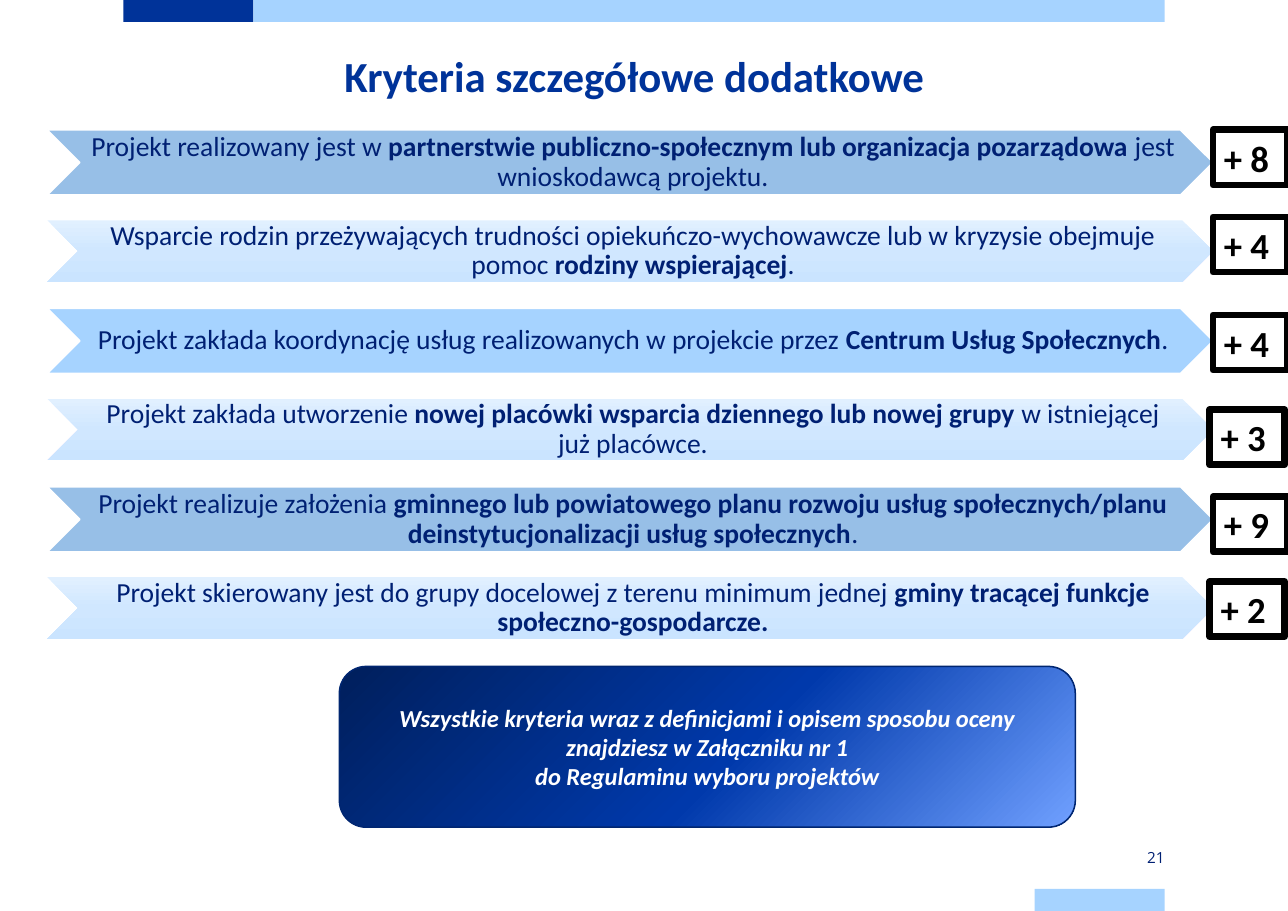
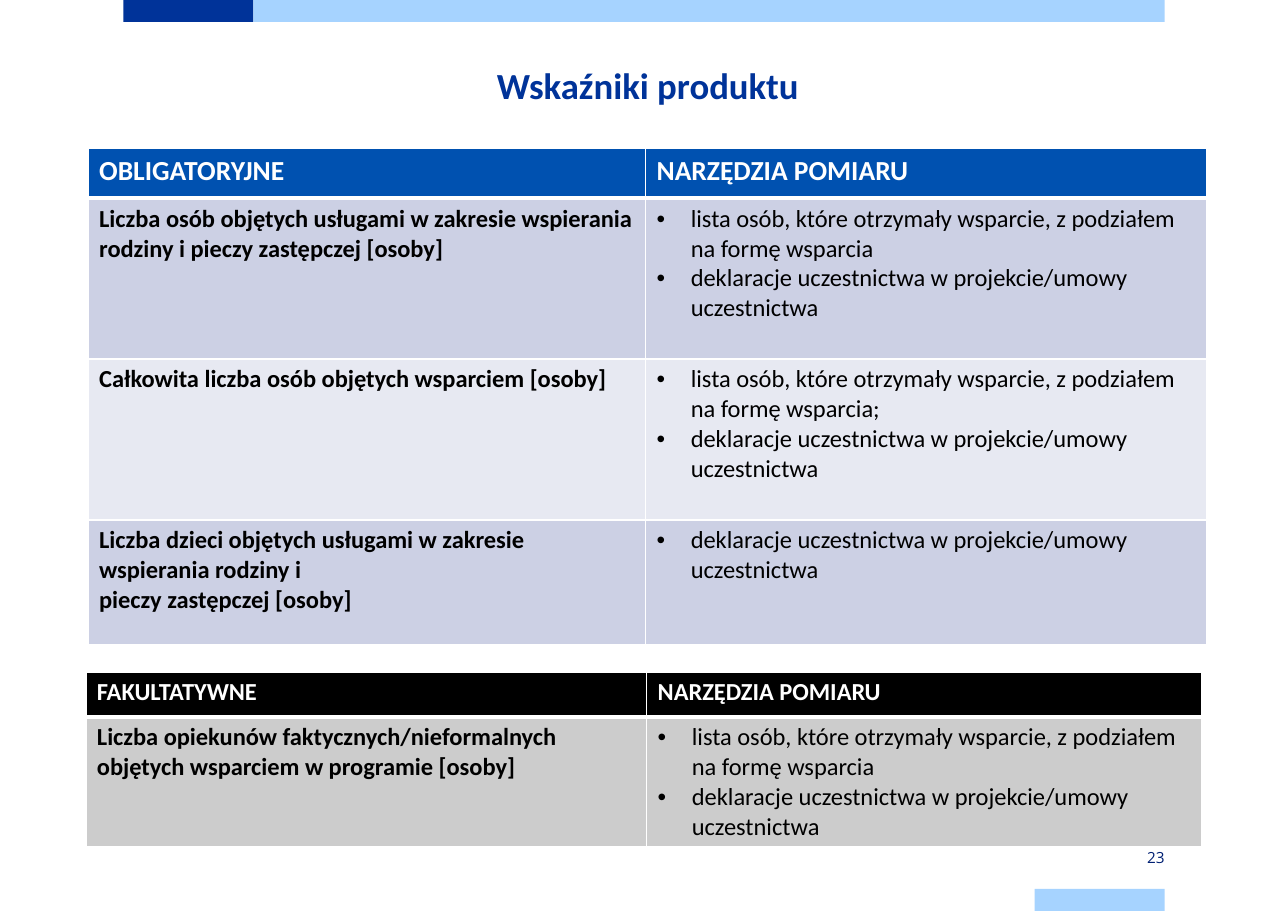
from pptx import Presentation
from pptx import util as u
from pptx.dml.color import RGBColor
from pptx.enum import shapes, text
from pptx.oxml import parse_xml
from pptx.oxml.ns import nsdecls, qn

COLORS = {
    "navy": "003399", "sky": "A6D3FF", "ink": "002073", "steel": "97BFE7",
    "white": "FFFFFF", "black": "000000", "outline": "002671",
    "header": "0051B0", "band": "CCD0E4", "band_light": "E7E9F2", "grey": "CCCCCC",
}
PALE_STOPS = [(0, "E1F0FF"), (50, "D0E7FF"), (100, "CAE4FF")]
DEEP_STOPS = [(0, "70A0FF"), (46, "0039AB"), (100, "001F5C")]
DOWNWARD = '<a:lin ang="5400000" scaled="0"/>'
FROM_CORNER = '<a:path path="circle"><a:fillToRect l="100000" t="100000"/></a:path>'
PP, MSO = text.PP_ALIGN, text.MSO_ANCHOR
SHAPE = shapes.MSO_SHAPE

CRITERIA = [  # text with *bold* parts, points, left of badge, top of badge
    ("Projekt realizowany jest w *partnerstwie publiczno-społecznym lub organizacja "
     "pozarządowa *jest wnioskodawcą projektu.", "+ 8", 11.01, 1.18),
    ("Wsparcie rodzin przeżywających trudności opiekuńczo-wychowawcze lub w kryzysie "
     "obejmuje pomoc *rodziny wspierającej*.", "+ 4", 11.01, 1.97),
    ("Projekt zakłada koordynację usług realizowanych w projekcie przez "
     "*Centrum Usług Społecznych*.", "+ 4", 11.01, 2.86),
    ("Projekt zakłada utworzenie *nowej placówki wsparcia dziennego lub nowej grupy* "
     "w istniejącej\njuż placówce.", "+ 3", 10.98, 3.72),
    ("Projekt realizuje założenia *gminnego lub powiatowego planu rozwoju usług "
     "społecznych/planu deinstytucjonalizacji usług społecznych*.", "+ 9", 11.01, 4.51),
    ("Projekt skierowany jest do grupy docelowej z terenu minimum jednej "
     "*gminy tracącej funkcje społeczno-gospodarcze.", "+ 2", 10.98, 5.28),
]
ROW_FILLS = ["steel", None, "sky", None, "steel", None]  # None: pale gradient

ATTENDANCE = "lista osób, które otrzymały wsparcie, z podziałem na formę wsparcia"
DECLARATIONS = "deklaracje uczestnictwa w projekcie/umowy uczestnictwa"
TOOLS = "NARZĘDZIA POMIARU"
MANDATORY = [  # indicator paragraphs, measuring tools
    (["Liczba osób objętych usługami w zakresie wspierania rodziny i pieczy "
      "zastępczej [osoby]"], [ATTENDANCE, DECLARATIONS]),
    (["Całkowita liczba osób objętych wsparciem [osoby]"],
     [ATTENDANCE + ";", DECLARATIONS]),
    (["Liczba dzieci objętych usługami w zakresie wspierania rodziny i",
      "pieczy zastępczej [osoby]"], [DECLARATIONS]),
]
OPTIONAL = [
    (["Liczba opiekunów faktycznych/nieformalnych objętych wsparciem w programie [osoby]"],
     [ATTENDANCE, DECLARATIONS]),
]


def rgb(name):
    return RGBColor.from_string(COLORS[name])


def inches(box):
    return [u.Inches(length) for length in box]


def style(paragraph, size, color, bold=None, align=None, font="Calibri"):
    paragraph.alignment = align
    paragraph.font.name = font
    paragraph.font.size = u.Pt(size)
    paragraph.font.color.rgb = rgb(color)
    paragraph.font.bold = bold


def add_block(slide, kind, box, fill=None, line=None, width=1.0):
    block = slide.shapes.add_shape(kind, *inches(box))
    block.shadow.inherit = False
    if fill:
        block.fill.solid()
        block.fill.fore_color.rgb = rgb(fill)
    else:
        block.fill.background()
    if line:
        block.line.color.rgb = rgb(line)
        block.line.width = u.Pt(width)
    else:
        block.line.fill.background()
    return block


def set_gradient(block, stops, direction):
    block.fill.gradient()
    properties = block.element.spPr
    marks = "".join(f'<a:gs pos="{pos * 1000}"><a:srgbClr val="{color}"/></a:gs>'
                    for pos, color in stops)
    gradient = parse_xml(f'<a:gradFill {nsdecls("a")} rotWithShape="1">'
                         f'<a:gsLst>{marks}</a:gsLst>{direction}</a:gradFill>')
    properties.replace(properties.find(qn("a:gradFill")), gradient)


def add_text(slide, box, insets=(0, 0, 0, 0), anchor=MSO.TOP):
    frame = slide.shapes.add_textbox(*inches(box)).text_frame
    frame.word_wrap = True
    frame.vertical_anchor = anchor
    (frame.margin_left, frame.margin_top,
     frame.margin_right, frame.margin_bottom) = inches(insets)
    return frame.paragraphs[0]


def add_frame(slide, number, title, title_box, title_size):
    """Bands, title and page number shared by all slides."""
    for box, color in [((1.12, 0, 1.18, 0.2), "navy"), ((2.3, 0, 8.27, 0.2), "sky"),
                       ((9.39, 8.07, 1.18, 0.2), "sky")]:
        add_block(slide, SHAPE.RECTANGLE, box, color)
    heading = add_text(slide, title_box)
    heading.text = title
    heading.line_spacing = u.Pt(36)
    style(heading, title_size, "navy", True, PP.CENTER)
    page = add_text(slide, (9.39, 7.68, 1.18, 0.2), (0, 0.08, 0, 0.08), MSO.MIDDLE)
    page.text = number
    style(page, 10, "ink", align=PP.RIGHT, font="Open Sans")


def add_criterion(slide, box, wording, fill):
    """Chevron with its wording between notch and tip."""
    left, top, width, height = box
    chevron = add_block(slide, SHAPE.CHEVRON, box, fill, "white" if fill else None)
    if not fill:
        set_gradient(chevron, PALE_STOPS, DOWNWARD)
    label = add_text(slide, (left + height / 2, top, width - height, height),
                     (0.08, 0.03, 0.03, 0.03), MSO.MIDDLE)
    style(label, 18, "ink", align=PP.CENTER)
    label.line_spacing = 0.9
    for part, words in enumerate(wording.split("*")):
        for index, line in enumerate(words.split("\n")):
            if index:
                label.add_line_break()
            if line:
                run = label.add_run()
                run.text = line
                if part % 2:
                    run.font.bold = True


def add_badge(slide, box, points):
    badge = add_block(slide, SHAPE.RECTANGLE, box, None, "black", 4.5)
    badge.text_frame.vertical_anchor = MSO.TOP
    score = badge.text_frame.paragraphs[0]
    score.text = points
    style(score, 24, "black", True, PP.LEFT)


def add_note(slide, box, lines):
    note = add_block(slide, SHAPE.ROUNDED_RECTANGLE, box, "navy", "outline")
    set_gradient(note, DEEP_STOPS, FROM_CORNER)
    frame = note.text_frame
    frame.word_wrap = True
    frame.vertical_anchor = MSO.MIDDLE
    frame.text = "\n".join(lines)
    for paragraph in frame.paragraphs:
        style(paragraph, 16, "white", True, PP.CENTER)
        paragraph.font.italic = True


def fill_cell(cell, lines, size, color, fill, bold, bullets=False, top=1, bottom=1):
    properties = cell._tc.get_or_add_tcPr()
    for side, width in zip("LRTB", (1, 1, top, bottom)):
        properties.append(parse_xml(
            f'<a:ln{side} {nsdecls("a")} w="{width * 12700}"><a:solidFill>'
            f'<a:srgbClr val="{COLORS["white"]}"/></a:solidFill></a:ln{side}>'))
    cell.fill.solid()
    cell.fill.fore_color.rgb = rgb(fill)
    cell.text_frame.text = "\n".join(lines)
    for paragraph in cell.text_frame.paragraphs:
        if bullets:
            layout = paragraph._p.get_or_add_pPr()
            layout.set("marL", str(u.Inches(0.31)))
            layout.set("indent", str(-u.Inches(0.31)))
            layout.append(parse_xml(f'<a:buFont {nsdecls("a")} typeface="Arial"/>'))
            layout.append(parse_xml(f'<a:buChar {nsdecls("a")} char="•"/>'))
        style(paragraph, size, color, bold)


def add_indicators(slide, origin, widths, heights, heading, rows, head_size, head_fill, bands):
    """Table of indicators and the tools that measure them."""
    box = (*origin, sum(widths), sum(heights))
    table = slide.shapes.add_table(len(heights), len(widths), *inches(box)).table
    for column, width in zip(table.columns, widths):
        column.width = u.Inches(width)
    for row, height in zip(table.rows, heights):
        row.height = u.Inches(height)
    for index, caption in enumerate((heading, TOOLS)):
        fill_cell(table.cell(0, index), [caption], head_size, "white", head_fill, True, bottom=3)
    for index, (indicator, tools) in enumerate(rows):
        fill, top = bands[index % len(bands)], 1 if index else 3
        fill_cell(table.cell(index + 1, 0), indicator, 16, "black", fill, True, top=top)
        fill_cell(table.cell(index + 1, 1), tools, 16, "black", fill, False, True, top=top)


def build_criteria(slide):
    add_frame(slide, "21", "Kryteria szczegółowe dodatkowe", (1.03, 0.42, 9.45, 0.48), 28)
    # Criteria, alternating solid and pale chevrons
    for index, (wording, _, _, _) in enumerate(CRITERIA):
        pair, second = divmod(index, 2)
        top = 1.18 + 1.62 * pair + 0.82 * second
        add_criterion(slide, (0.43, top, 10.58, 0.56 if second else 0.59),
                      wording, ROW_FILLS[index])
    add_note(slide, (3.08, 6.05, 6.68, 1.46), [
        "Wszystkie kryteria wraz z definicjami i opisem sposobu oceny "
        "znajdziesz w Załączniku nr 1",
        "do Regulaminu wyboru projektów"])
    # Points for each criterion
    for _, points, left, top in CRITERIA:
        add_badge(slide, (left, top, 0.68, 0.5), points)


def build_indicators(slide):
    add_frame(slide, "23", "Wskaźniki produktu", (0.8, 0.47, 10.16, 1.18), 24)
    add_indicators(slide, (0.8, 1.35), (5.06, 5.09), (0.45, 1.46, 1.46, 1.13),
                   "OBLIGATORYJNE", MANDATORY, 18, "header", ["band", "band_light"])
    add_indicators(slide, (0.78, 6.1), (5.09, 5.04), (0.41, 1.18),
                   "FAKULTATYWNE", OPTIONAL, 16, "black", ["grey"])


def main():
    deck = Presentation()
    deck.slide_width, deck.slide_height = inches((11.69, 8.27))
    for build in (build_criteria, build_indicators):
        build(deck.slides.add_slide(deck.slide_layouts[6]))
    deck.save("out.pptx")


if __name__ == "__main__":
    main()
